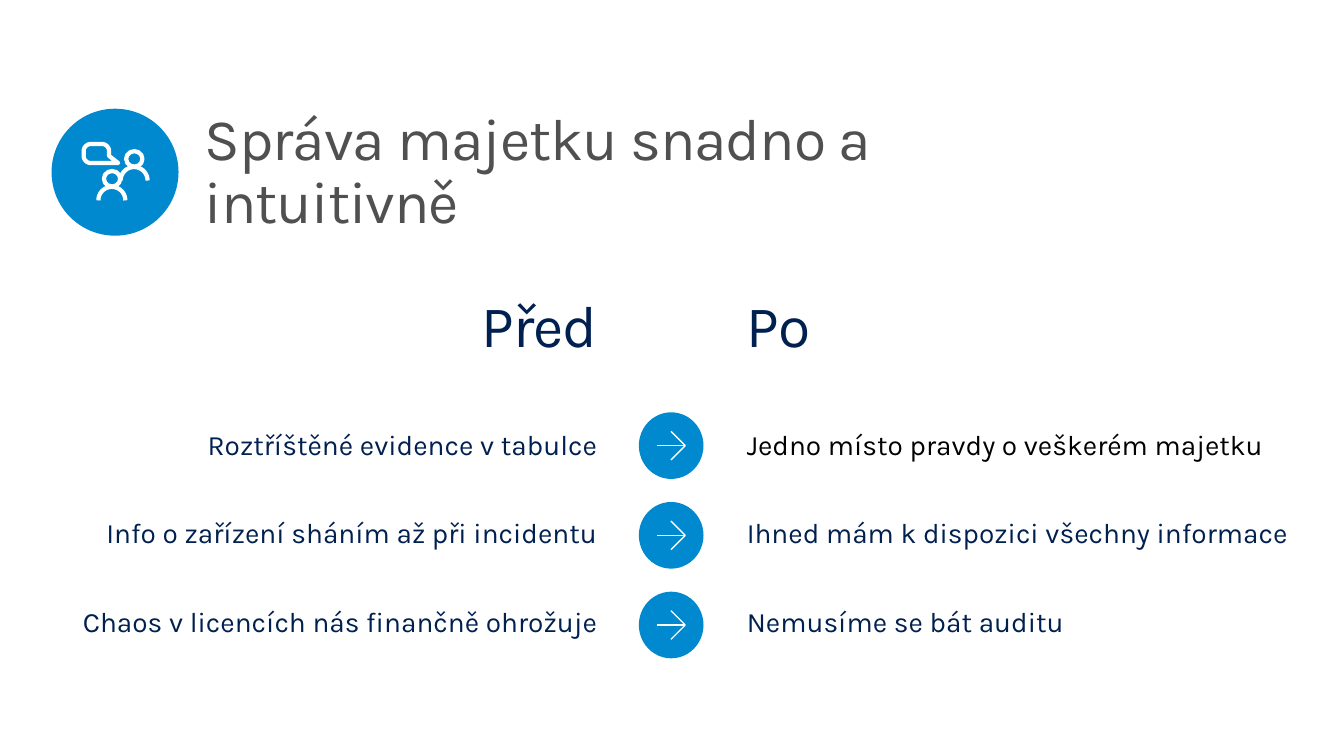
from math import cos, radians, sin

from pptx import Presentation
from pptx import util as u
from pptx.dml.color import RGBColor
from pptx.enum import shapes, text
from pptx.oxml.ns import qn

NAVY = RGBColor(0x00, 0x20, 0x50)
BLUE = RGBColor(0x00, 0x89, 0xCF)
GRAY = RGBColor(0x50, 0x50, 0x50)
BLACK = RGBColor(0, 0, 0)
WHITE = RGBColor(255, 255, 255)

FONT = "Karla"
ROWS = [
    ("Roztříštěné evidence v tabulce", "Jedno místo pravdy o veškerém majetku", 15.34, BLACK),
    ("Info o zařízení sháním až při incidentu", "Ihned mám k dispozici všechny informace", 16.48, NAVY),
    ("Chaos v licencích nás finančně ohrožuje", "Nemusíme se bát auditu", 15.34, NAVY),
]


def add_text(page, words, left, top, width, height, size=20, color=NAVY,
             align=text.PP_ALIGN.LEFT, anchor=text.MSO_ANCHOR.MIDDLE,
             inset=(0.51, 0.41), after=6, spacing=None, grow=True):
    box = page.shapes.add_textbox(u.Cm(left), u.Cm(top), u.Cm(width), u.Cm(height))
    frame = box.text_frame
    frame.word_wrap = True
    frame.auto_size = (text.MSO_AUTO_SIZE.SHAPE_TO_FIT_TEXT if grow
                       else text.MSO_AUTO_SIZE.NONE)
    frame.vertical_anchor = anchor
    frame.margin_left = frame.margin_right = u.Cm(inset[0])
    frame.margin_top = frame.margin_bottom = u.Cm(inset[1])
    para = frame.paragraphs[0]
    para.alignment = align
    para.line_spacing = 0.9
    para.space_after = u.Pt(after)
    span = para.add_run()
    span.text = words
    span.font.name = FONT
    span.font.size = u.Pt(size)
    span.font.color.rgb = color
    if spacing:
        span._r.get_or_add_rPr().set("spc", str(int(spacing * 100)))


def add_oval(parent, left, top, width, height):
    oval = parent.shapes.add_shape(
        shapes.MSO_SHAPE.OVAL, u.Cm(left), u.Cm(top), u.Cm(width), u.Cm(height))
    oval.shadow.inherit = False
    return oval


def add_disc(parent, left, top, width, height):
    disc = add_oval(parent, left, top, width, height)
    disc.fill.solid()
    disc.fill.fore_color.rgb = BLUE
    disc.line.fill.background()


def outline(shape, weight):
    shape.fill.background()
    shape.line.color.rgb = WHITE
    shape.line.width = u.Pt(weight)


def add_path(parent, points, weight, close=False):
    corners = [(u.Cm(x), u.Cm(y)) for x, y in points]
    builder = parent.shapes.build_freeform(*corners[0])
    builder.add_line_segments(corners[1:], close=close)
    stroke = builder.convert_to_shape()
    stroke.shadow.inherit = False
    outline(stroke, weight)


def arc(x, y, radius, start, end, steps=18):
    angles = [radians(start + (end - start) * step / steps) for step in range(steps + 1)]
    return [(x + radius * cos(angle), y + radius * sin(angle)) for angle in angles]


def add_arrow_badge(page, left, top, width=1.63, height=1.68):
    badge = page.shapes.add_group_shape()
    add_disc(badge, left, top, width, height)
    middle, tip, barb = top + height / 2, left + 1.17, 0.36
    shaft = badge.shapes.add_connector(
        shapes.MSO_CONNECTOR.STRAIGHT,
        u.Cm(left + 0.46), u.Cm(middle), u.Cm(tip), u.Cm(middle))
    shaft.line.color.rgb = WHITE
    shaft.line.width = u.Pt(1)
    properties = shaft._element.spPr
    properties.append(properties.makeelement(qn("a:effectLst"), {}))
    add_path(badge, [(tip - barb, middle - barb), (tip, middle),
                     (tip - barb, middle + barb)], 1)


def add_person(icon, left, top):
    outline(add_oval(icon, left, top, 0.41, 0.39), 3)
    add_path(icon, arc(left + 0.2, top + 0.74, 0.34, 180, 360), 3)


def add_bubble(icon, left, top, width=0.64, height=0.48, radius=0.18):
    right, bottom = left + width, top + height
    points = arc(right - radius, top + radius, radius, -90, 0)
    points += [(right, top + 0.3), (right + 0.23, bottom)]
    points += arc(left + radius, bottom - radius, radius, 90, 180)
    points += arc(left + radius, top + radius, radius, 180, 270)
    add_path(icon, points, 3, close=True)


def add_header(page, left, top, size=3.2):
    add_text(page, "Správa majetku snadno a intuitivně", left + 3.45, top - 0.28,
             23.83, 3.81, size=42, color=GRAY, inset=(0.41, 0.25), after=0,
             spacing=-0.7, grow=False)
    add_disc(page, left, top, size, size)
    icon = page.shapes.add_group_shape()
    add_person(icon, left + 1.88, top + 1.07)
    add_bubble(icon, left + 0.81, top + 0.89)
    add_person(icon, left + 1.32, top + 1.57)


def add_comparison(page, left, top):
    heading = {"size": 42, "after": 24, "spacing": -0.7}
    after_left = left + 17.65
    right = text.PP_ALIGN.RIGHT
    add_text(page, "Před", left + 3.25, top, 11.66, 2.46, align=right, **heading)
    add_text(page, "Po", after_left, top, 15.34, 2.46, **heading)
    for index, (before, after, width, color) in enumerate(ROWS):
        row_top = top + 3.4 + index * 2.24
        anchor = text.MSO_ANCHOR.TOP if index else text.MSO_ANCHOR.MIDDLE
        add_text(page, before, left, row_top, 14.91, 1.6, align=right, anchor=anchor)
        add_text(page, after, after_left, row_top, width, 1.6, color=color, anchor=anchor)
        add_arrow_badge(page, left + 15.44, top + 3.33 + index * 2.26)


def main():
    deck = Presentation()
    deck.slide_width, deck.slide_height = u.Cm(33.87), u.Cm(19.05)
    page = deck.slides.add_slide(deck.slide_layouts[6])
    add_comparison(page, 0.66, 7.06)
    add_header(page, 1.3, 2.74)
    deck.save("out.pptx")


if __name__ == "__main__":
    main()
